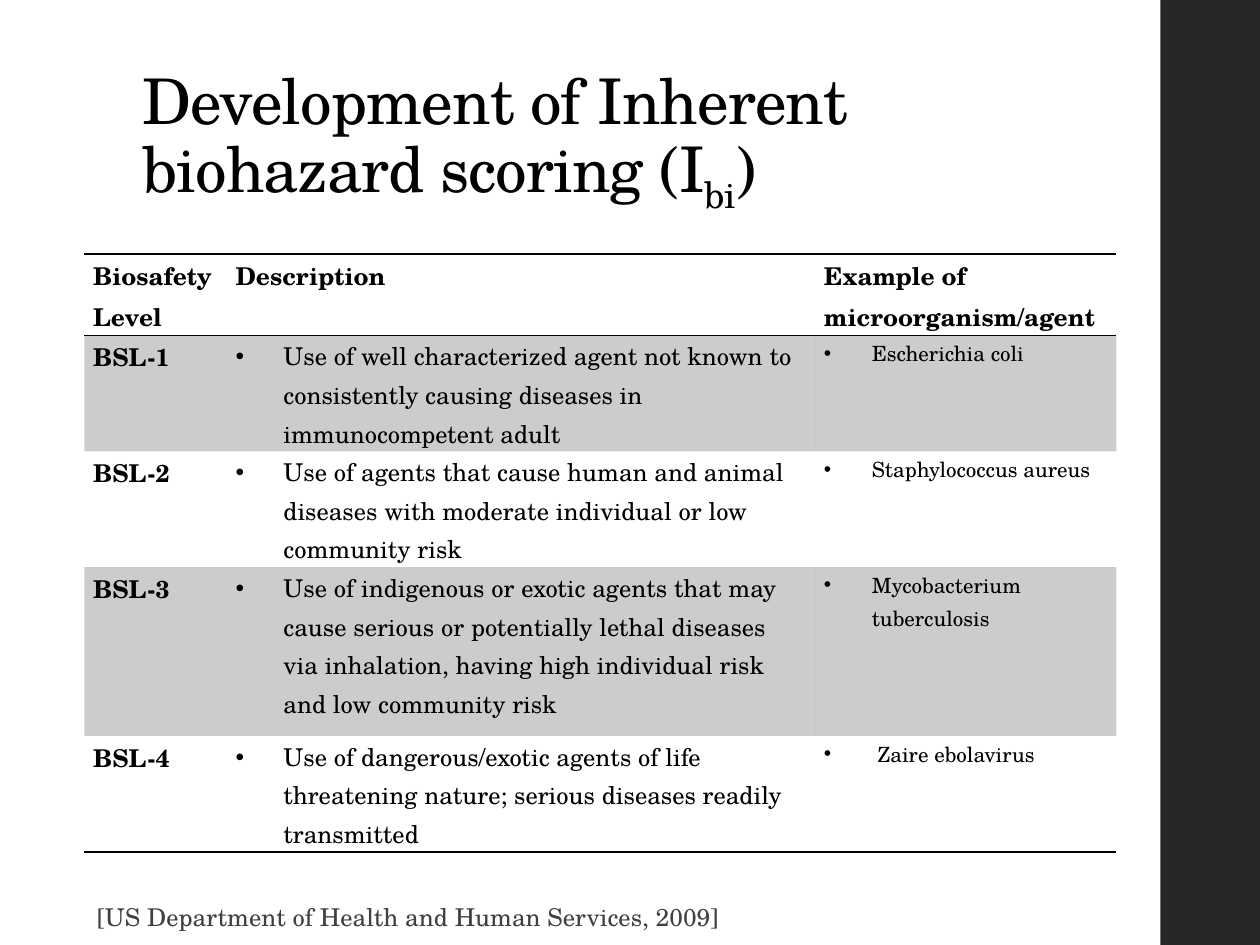
from dataclasses import dataclass

from lxml import etree
from pptx import Presentation
from pptx.dml.color import RGBColor
from pptx.enum.shapes import MSO_SHAPE
from pptx.enum.text import MSO_ANCHOR, MSO_AUTO_SIZE, PP_ALIGN
from pptx.oxml.ns import qn
from pptx.util import Inches, Pt

RECTANGLE = MSO_SHAPE.RECTANGLE
LEFT = PP_ALIGN.LEFT
TOP, MIDDLE = MSO_ANCHOR.TOP, MSO_ANCHOR.MIDDLE
NO_AUTO_SIZE = MSO_AUTO_SIZE.NONE

BLACK = RGBColor(0x00, 0x00, 0x00)
CHARCOAL = RGBColor(0x26, 0x26, 0x26)
GRAY = RGBColor(0x40, 0x40, 0x40)

FONT = "TeX Gyre Schola"
SLIDE_WIDTH, SLIDE_HEIGHT = Inches(10), Inches(7.5)
PLAIN_TABLE_STYLE = "{2D5ABB26-0587-4C30-8999-92F81FD0307C}"
COLUMN_WIDTHS = (1.13, 4.67, 2.39)
ROW_HEIGHTS = (0.54, 0.81, 0.81, 1.34, 0.81)
HEADINGS = ("Biosafety Level", "Description", "Example of microorganism/agent")
CELL_INSET = Inches(0.07)
BULLET_INDENT = Inches(0.38)


@dataclass(frozen=True)
class Box:
    """A rectangle given as shares of the slide's width and height."""
    left: float
    top: float
    width: float
    height: float

    def lengths(self) -> tuple[int, int, int, int]:
        return (int(self.left * SLIDE_WIDTH), int(self.top * SLIDE_HEIGHT),
                int(self.width * SLIDE_WIDTH), int(self.height * SLIDE_HEIGHT))


@dataclass(frozen=True)
class SafetyLevel:
    name: str
    description: str
    example: str


SIDEBAR = Box(0.921, 0, 0.08, 1)
TITLE = Box(0.103, 0.053, 0.795, 0.193)
TABLE = Box(0.067, 0.269, 0.819, 0.575)
SOURCE = Box(0.067, 0.948, 0.516, 0.045)

LEVELS = (
    SafetyLevel("BSL-1", "Use of well characterized agent not known to consistently "
                "causing diseases in immunocompetent adult", "Escherichia coli"),
    SafetyLevel("BSL-2", "Use of agents that cause human and animal diseases with "
                "moderate individual or low community risk", "Staphylococcus aureus"),
    SafetyLevel("BSL-3", "Use of indigenous or exotic agents that may cause serious or "
                "potentially lethal diseases via inhalation, having high individual "
                "risk and low community risk", "Mycobacterium tuberculosis"),
    SafetyLevel("BSL-4", "Use of dangerous/exotic agents of life threatening nature; "
                "serious diseases readily transmitted", " Zaire ebolavirus"),
)


def set_font(paragraph, size: float, color: RGBColor, bold: bool = False) -> None:
    font = paragraph.font
    font.name, font.size, font.bold = FONT, Pt(size), bold
    font.color.rgb = color


def add_bullet(paragraph) -> None:
    properties = paragraph._p.get_or_add_pPr()
    properties.set("marL", str(BULLET_INDENT))
    properties.set("indent", str(-BULLET_INDENT))
    etree.SubElement(properties, qn("a:buFont")).set("typeface", "Arial")
    etree.SubElement(properties, qn("a:buChar")).set("char", "•")


def add_border(cell, position: int, side: str) -> None:
    line = etree.Element(qn(f"a:{side}"), w=str(Pt(1)))
    fill = etree.SubElement(line, qn("a:solidFill"))
    etree.SubElement(fill, qn("a:srgbClr")).set("val", str(BLACK))
    cell._tc.get_or_add_tcPr().insert(position, line)


def shade(cell) -> None:
    cell.fill.solid()
    cell.fill.fore_color.rgb = BLACK
    color = cell._tc.tcPr.find(".//" + qn("a:srgbClr"))
    etree.SubElement(color, qn("a:alpha")).set("val", "20000")


def fill_cell(cell, text: str, size: float, bold: bool, bulleted: bool,
              shaded: bool, borders: tuple[str, ...]) -> None:
    cell.margin_left = cell.margin_right = CELL_INSET
    cell.margin_top = cell.margin_bottom = 0
    cell.vertical_anchor = TOP
    cell.text = text
    paragraph = cell.text_frame.paragraphs[0]
    paragraph.line_spacing = 1.07
    if bulleted:
        add_bullet(paragraph)
    set_font(paragraph, size, BLACK, bold)
    if shaded:
        shade(cell)
    else:
        cell.fill.background()
    for position, side in enumerate(borders):
        add_border(cell, position, side)


def add_sidebar(slide) -> None:
    sidebar = slide.shapes.add_shape(RECTANGLE, *SIDEBAR.lengths())
    sidebar.shadow.inherit = False
    sidebar.fill.solid()
    sidebar.fill.fore_color.rgb = CHARCOAL
    sidebar.line.fill.background()


def format_title(slide) -> None:
    title = slide.shapes.title
    title.left, title.top, title.width, title.height = TITLE.lengths()
    frame = title.text_frame
    frame.auto_size, frame.vertical_anchor = NO_AUTO_SIZE, MIDDLE
    paragraph = frame.paragraphs[0]
    paragraph.alignment, paragraph.line_spacing = LEFT, 0.81
    set_font(paragraph, 36, BLACK)
    paragraph._p.pPr.find(qn("a:defRPr")).set("spc", "-50")
    for text in ("Development of Inherent biohazard scoring (I", "bi", ")"):
        run = paragraph.add_run()
        run.text = text
        if text == "bi":
            run.font._element.set("baseline", "-25000")


def add_level_table(slide) -> None:
    frame = slide.shapes.add_table(len(ROW_HEIGHTS), len(COLUMN_WIDTHS), *TABLE.lengths())
    table = frame.table
    table.horz_banding = False
    table._tbl.tblPr.find(qn("a:tableStyleId")).text = PLAIN_TABLE_STYLE
    for column, width in zip(table.columns, COLUMN_WIDTHS):
        column.width = Inches(width)
    for row, height in zip(table.rows, ROW_HEIGHTS):
        row.height = Inches(height)

    # Header row
    for column, heading in enumerate(HEADINGS):
        fill_cell(table.cell(0, column), heading, 14, True, False, False, ("lnT", "lnB"))

    # One row per level, every other one shaded
    for row, level in enumerate(LEVELS, start=1):
        borders = ("lnB",) if row == len(LEVELS) else ()
        texts = (level.name, level.description, level.example)
        for column, (text, size) in enumerate(zip(texts, (14, 14, 12))):
            fill_cell(table.cell(row, column), text, size, column == 0, column > 0,
                      row % 2 == 1, borders)


def add_source(slide) -> None:
    frame = slide.shapes.add_textbox(*SOURCE.lengths()).text_frame
    frame.word_wrap = False
    paragraph = frame.paragraphs[0]
    paragraph.text = "[US Department of Health and Human Services, 2009]"
    set_font(paragraph, 14, GRAY)


def main() -> None:
    presentation = Presentation()
    presentation.slide_width, presentation.slide_height = SLIDE_WIDTH, SLIDE_HEIGHT
    slide = presentation.slides.add_slide(presentation.slide_layouts.get_by_name("Title Only"))
    add_sidebar(slide)
    format_title(slide)
    add_level_table(slide)
    add_source(slide)
    presentation.save("out.pptx")


if __name__ == "__main__":
    main()
